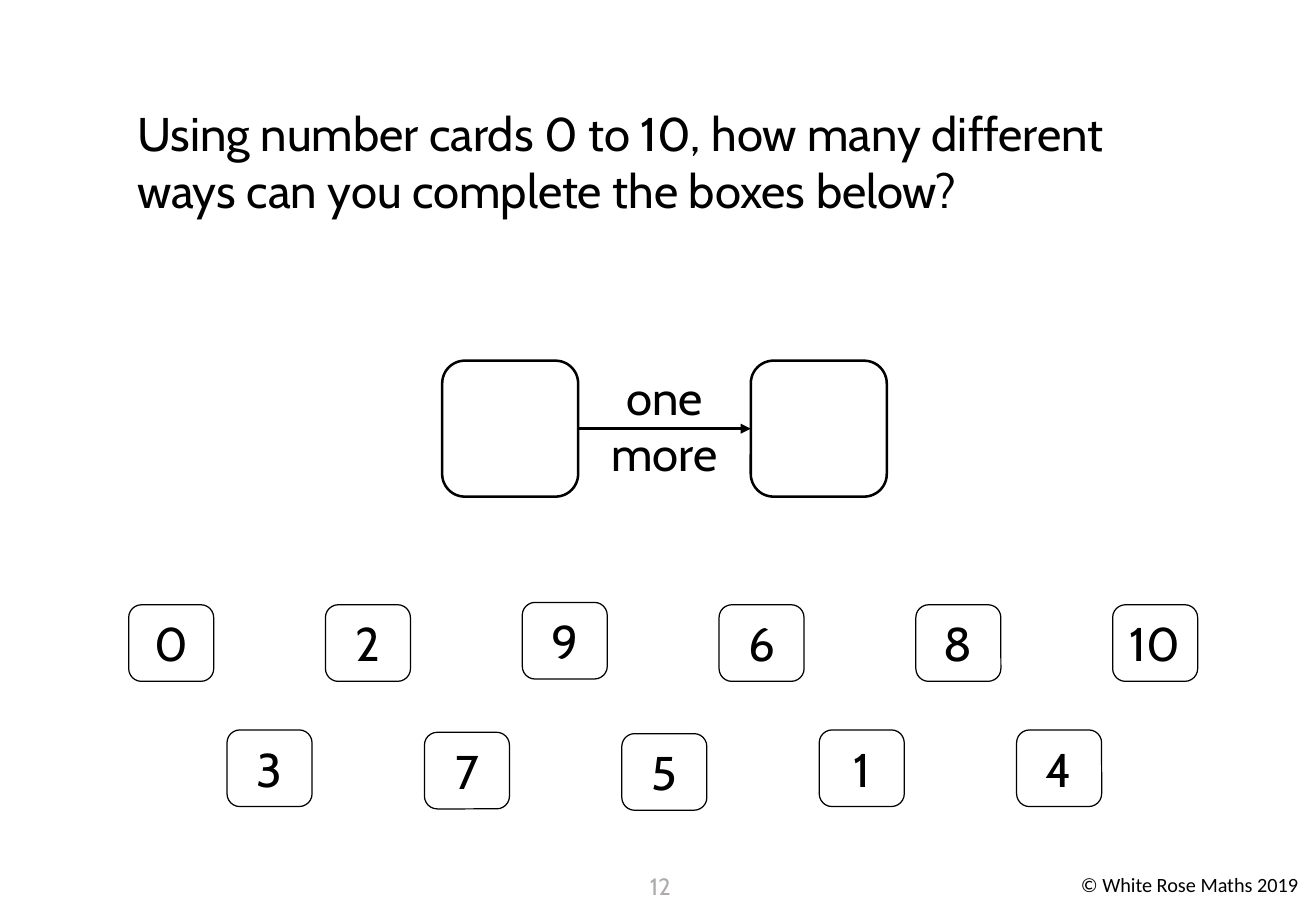
from lxml.etree import SubElement
from pptx import Presentation
from pptx.dml.color import RGBColor
from pptx.enum.shapes import MSO_CONNECTOR, MSO_SHAPE
from pptx.enum.text import MSO_ANCHOR, PP_ALIGN
from pptx.oxml.ns import qn
from pptx.util import Pt

BLACK, WHITE, GREY = "000000", "FFFFFF", "AFABAB"
CARD_WIDTH, CARD_HEIGHT = 50.4, 45.4
TOP_CARDS = [("0", 0), ("2", 0), ("9", -1.4), ("6", 0), ("8", 0), ("10", 0)]
BOTTOM_CARDS = [("3", 0), ("7", 1.4), ("5", 2.2), ("1", 0), ("4", 0)]


def color(value):
    """Turn a hex string into a colour."""
    return RGBColor.from_string(value)


def write(shape, text, size=28, ink=BLACK, font="Cabin", align=PP_ALIGN.LEFT):
    """Write one run of text into a shape."""
    paragraph = shape.text_frame.paragraphs[0]
    paragraph.alignment = align
    run = paragraph.add_run()
    run.text = text
    run.font.name = font
    run.font.size = Pt(size)
    run.font.color.rgb = color(ink)


def add_text(slide, box, text, **style):
    """Add a wrapping text box."""
    shape = slide.shapes.add_textbox(*map(Pt, box))
    shape.text_frame.word_wrap = True
    write(shape, text, **style)


def add_rounded_box(slide, box, line_width, fill=None):
    """Add a rounded square with a black outline."""
    shape = slide.shapes.add_shape(MSO_SHAPE.ROUNDED_RECTANGLE, *map(Pt, box))
    shape.shadow.inherit = False
    if fill:
        shape.fill.solid()
        shape.fill.fore_color.rgb = color(fill)
    else:
        shape.fill.background()
    shape.line.color.rgb = color(BLACK)
    shape.line.width = Pt(line_width)
    return shape


def add_arrow(slide, start, end):
    """Join the right side of one box to the left side of another."""
    connector = slide.shapes.add_connector(MSO_CONNECTOR.STRAIGHT, 0, 0, 0, 0)
    connector.begin_connect(start, 3)
    connector.end_connect(end, 1)
    connector.line.color.rgb = color(BLACK)
    connector.line.width = Pt(1.5)
    SubElement(connector.line._get_or_add_ln(), qn("a:tailEnd"), type="triangle")
    SubElement(connector._element.spPr, qn("a:effectLst"))


def add_one_more(slide, left, top, width, side):
    """Draw two empty boxes joined by a labelled arrow."""
    first, second = [
        add_rounded_box(slide, (x, top, side, side), 1.5, WHITE)
        for x in (left, left + width - side)
    ]
    label_width = 85.7
    label_left = left + (width - label_width) / 2
    add_text(slide, (label_left, top + 0.7, label_width, 75), "one more",
             align=PP_ALIGN.CENTER)
    add_arrow(slide, first, second)


def add_card_row(slide, left, top, width, cards):
    """Spread number cards evenly, each with its own vertical nudge."""
    step = (width - CARD_WIDTH) / (len(cards) - 1)
    for index, (number, nudge) in enumerate(cards):
        box = (left + index * step, top + nudge, CARD_WIDTH, CARD_HEIGHT)
        card = add_rounded_box(slide, box, 0.75)
        card.text_frame.word_wrap = True
        card.text_frame.vertical_anchor = MSO_ANCHOR.MIDDLE
        write(card, number, align=PP_ALIGN.CENTER)


def add_footer(slide, top):
    """Add the page number and the copyright line."""
    add_text(slide, (633.6, top, 146, 21.6), "© White Rose Maths 2019",
             size=12, font="Calibri")
    add_text(slide, (373, top, 36.7, 28.8), "12", size=14, ink=GREY,
             align=PP_ALIGN.CENTER)


def main():
    """Build and save the slide."""
    presentation = Presentation()
    presentation.slide_width, presentation.slide_height = Pt(780), Pt(540)
    slide = presentation.slides.add_slide(presentation.slide_layouts[6])
    add_footer(slide, 513.4)
    add_text(slide, (74.2, 58.3, 634.3, 75),
             "Using number cards 0 to 10, how many different ways "
             "can you complete the boxes below?")
    add_one_more(slide, 262.1, 213.8, 263.5, 80.6)
    add_card_row(slide, 76.3, 358.5, 633.6, TOP_CARDS)
    add_card_row(slide, 134.6, 432.7, 518.4, BOTTOM_CARDS)
    presentation.save("out.pptx")


if __name__ == "__main__":
    main()
